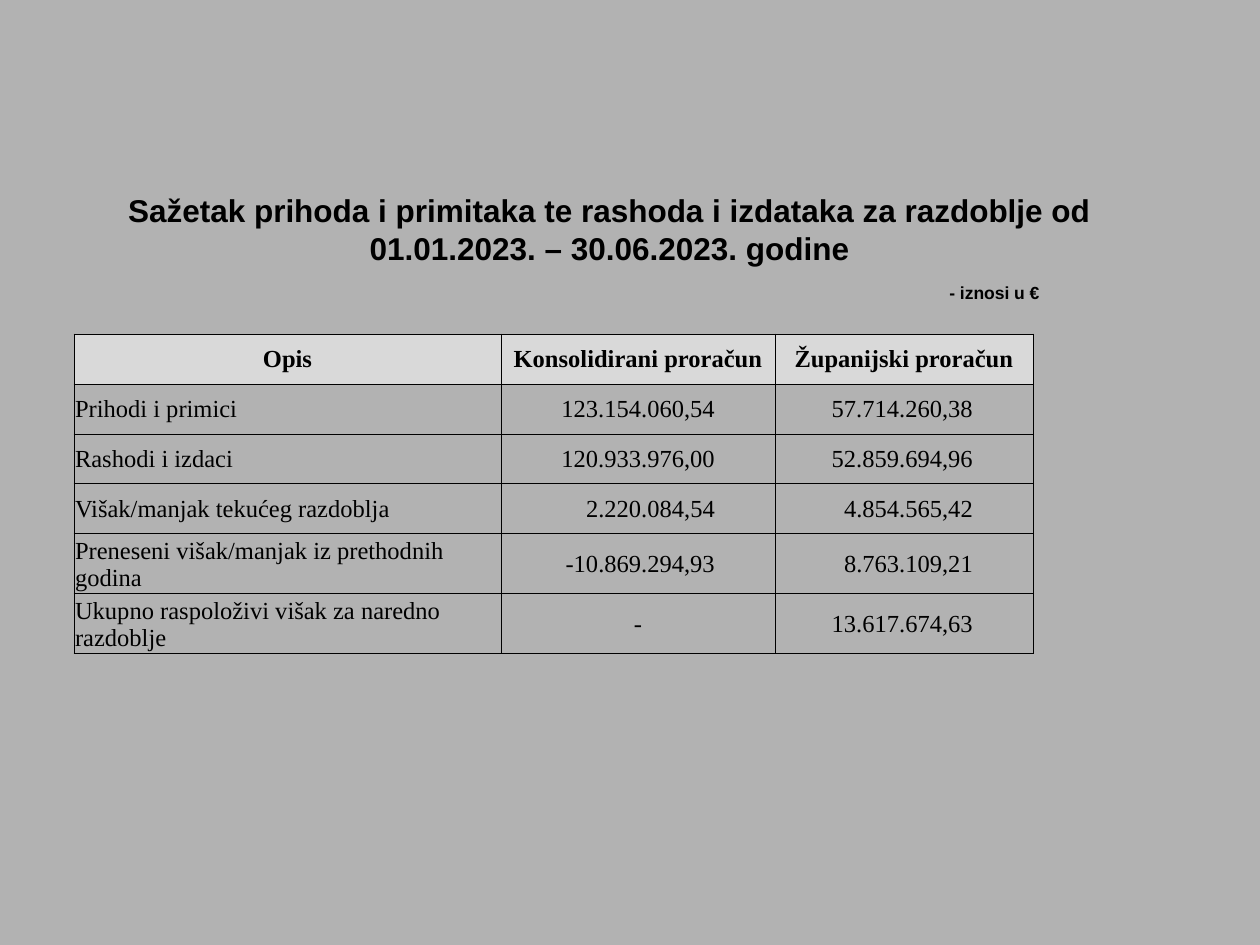
from lxml.etree import SubElement
from pptx import Presentation
from pptx.dml.color import RGBColor
from pptx.enum.text import MSO_ANCHOR as Anchor, MSO_AUTO_SIZE as AutoSize, PP_ALIGN as Align
from pptx.oxml.ns import qn
from pptx.util import Pt

PX = 914400 // 126
COLORS = {"background": "B2B2B2", "header": "D9D9D9", "ink": "000000"}
TITLE_FORMAT = {"name": "Arial", "size": Pt(18), "bold": True}
UNIT_FORMAT = {"name": "Arial", "size": Pt(10), "bold": True}
HEADER_FORMAT = {"name": "Times New Roman", "size": Pt(14), "bold": True}
BODY_FORMAT = {**HEADER_FORMAT, "bold": False}
COLUMN_WIDTHS = [427, 274, 258]
ROW_HEIGHTS = [50] * 4 + [60] * 2
NUMBER_MARGIN = 60
BUDGET = [
    ["Opis", "Konsolidirani proračun", "Županijski proračun"],
    ["Prihodi i primici", "123.154.060,54", "57.714.260,38"],
    ["Rashodi i izdaci", "120.933.976,00", "52.859.694,96"],
    ["Višak/manjak tekućeg razdoblja", "2.220.084,54", "4.854.565,42"],
    ["Preneseni višak/manjak iz prethodnih godina", "-10.869.294,93", "8.763.109,21"],
    ["Ukupno raspoloživi višak za naredno razdoblje", "-", "13.617.674,63"],
]


def rgb(name):
    """Return the named colour."""
    return RGBColor.from_string(COLORS[name])


def set_all(target, values):
    """Set each attribute of the target from a dict."""
    for name, value in values.items():
        setattr(target, name, value)


def place(shape, left, top, width, height):
    """Position a shape in px."""
    set_all(shape, {"left": left * PX, "top": top * PX,
                    "width": width * PX, "height": height * PX})


def write(text_frame, text, font_format, alignment):
    """Write one formatted paragraph."""
    paragraph = text_frame.paragraphs[0]
    paragraph.alignment = alignment
    run = paragraph.add_run()
    run.text = text
    set_all(run.font, font_format)
    run.font.color.rgb = rgb("ink")


def add_title(slide, text):
    """Fill and place the title placeholder."""
    title = slide.shapes.title
    place(title, 64, 185, 1091, 100)
    set_all(title.text_frame, {"word_wrap": True, "auto_size": AutoSize.NONE,
                               "vertical_anchor": Anchor.TOP})
    write(title.text_frame, text, TITLE_FORMAT, Align.CENTER)


def add_unit_label(slide, text):
    """Add the label that names the currency."""
    label = slide.shapes.add_textbox(0, 0, 0, 0)
    place(label, 937, 276, 120, 30)
    label.text_frame.word_wrap = False
    write(label.text_frame, text, UNIT_FORMAT, Align.LEFT)


def add_borders(cell):
    """Draw thin lines on all four sides of a cell."""
    properties = cell._tc.get_or_add_tcPr()
    for side in ("a:lnL", "a:lnR", "a:lnT", "a:lnB"):
        line = SubElement(properties, qn(side), w=str(Pt(0.5)))
        fill = SubElement(line, qn("a:solidFill"))
        SubElement(fill, qn("a:srgbClr"), val=COLORS["ink"])


def format_cell(cell, text, is_header, is_number):
    """Write and style one table cell."""
    margin_right = NUMBER_MARGIN * PX if is_number else PX
    set_all(cell, {"margin_left": PX, "margin_right": margin_right, "margin_top": PX,
                   "margin_bottom": 0, "vertical_anchor": Anchor.MIDDLE})
    add_borders(cell)
    if is_header:
        cell.fill.solid()
        cell.fill.fore_color.rgb = rgb("header")
    else:
        cell.fill.background()
    if is_number:
        alignment = Align.RIGHT
    elif is_header or text == "-":
        alignment = Align.CENTER
    else:
        alignment = Align.LEFT
    write(cell.text_frame, text, HEADER_FORMAT if is_header else BODY_FORMAT, alignment)


def add_budget_table(slide, rows):
    """Add the table of budget totals."""
    frame = slide.shapes.add_table(len(rows), len(rows[0]), 74 * PX, 334 * PX,
                                   sum(COLUMN_WIDTHS) * PX, sum(ROW_HEIGHTS) * PX)
    table = frame.table
    set_all(table, {"first_row": False, "horz_banding": False})
    for column, width in zip(table.columns, COLUMN_WIDTHS):
        column.width = width * PX
    for row, height in zip(table.rows, ROW_HEIGHTS):
        row.height = height * PX
    for row_index, texts in enumerate(rows):
        for column_index, text in enumerate(texts):
            is_header = row_index == 0
            is_number = not is_header and column_index > 0 and text != "-"
            format_cell(table.cell(row_index, column_index), text, is_header, is_number)


def main():
    """Build and save the presentation."""
    presentation = Presentation()
    set_all(presentation, {"slide_width": 1260 * PX, "slide_height": 945 * PX})
    slide = presentation.slides.add_slide(presentation.slide_layouts[5])
    slide.background.fill.solid()
    slide.background.fill.fore_color.rgb = rgb("background")
    add_title(slide, "Sažetak prihoda i primitaka te rashoda i izdataka "
                     "za razdoblje od 01.01.2023. – 30.06.2023. godine")
    add_budget_table(slide, BUDGET)
    add_unit_label(slide, "- iznosi u €")
    presentation.save("out.pptx")


if __name__ == "__main__":
    main()
